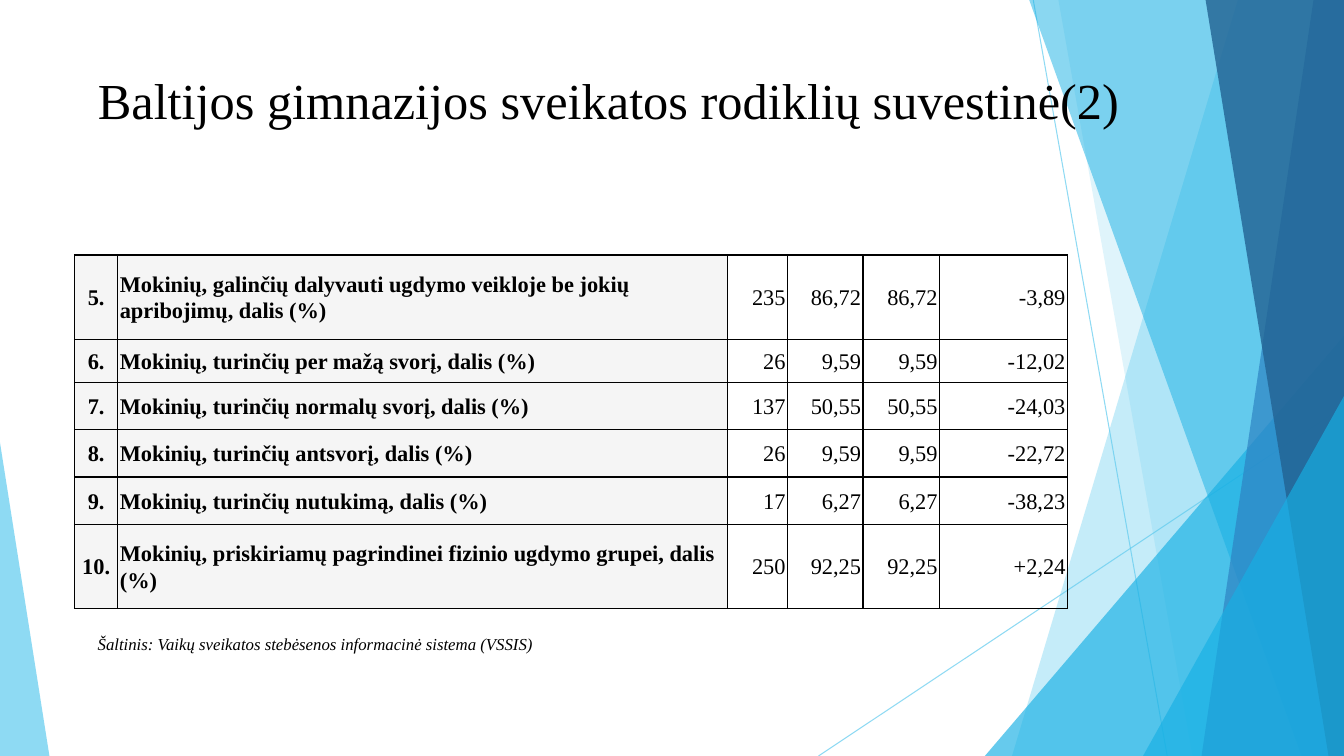
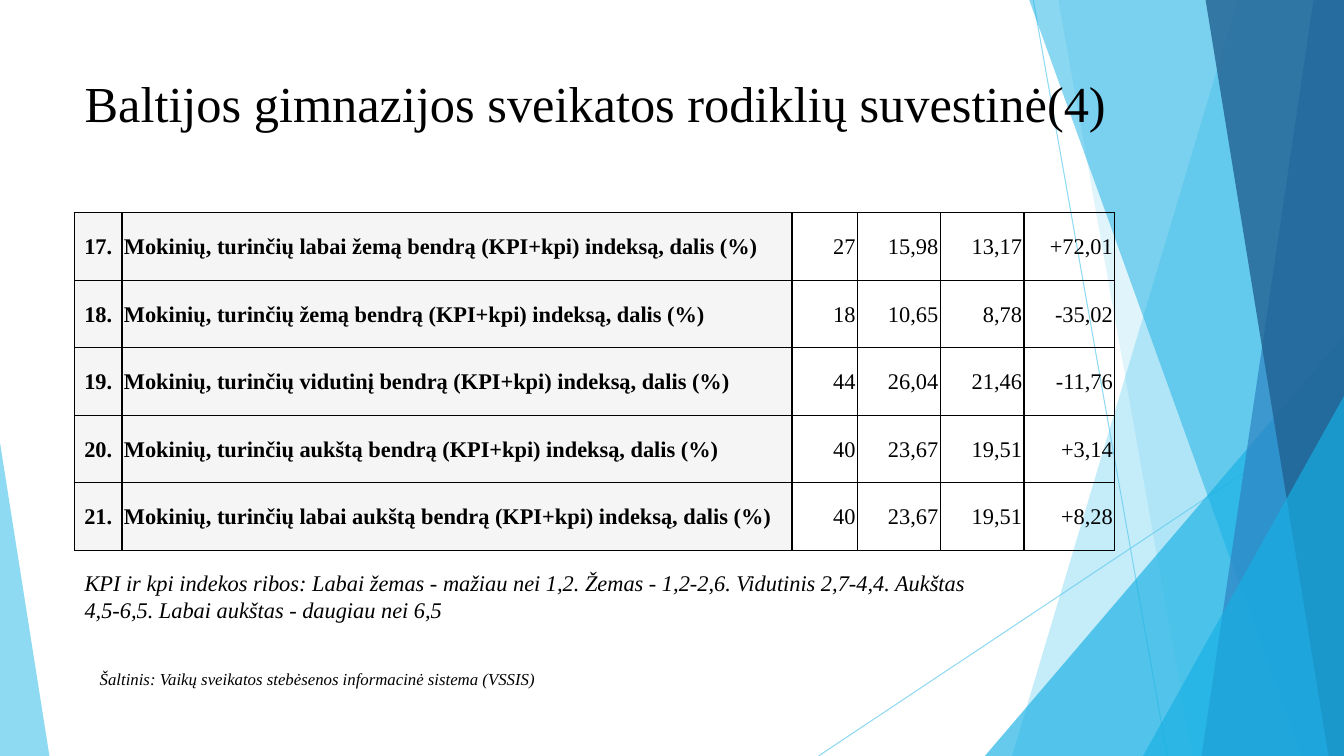
import pptx
import pptx.util
import pptx.dml.color
import pptx.enum.shapes
import pptx.enum.text
import pptx.oxml
import pptx.oxml.ns

Rgb = pptx.dml.color.RGBColor
Pt = pptx.util.Pt
Align = pptx.enum.text.PP_ALIGN
Anchor = pptx.enum.text.MSO_ANCHOR
Fit = pptx.enum.text.MSO_AUTO_SIZE

WIDE, HIGH = pptx.util.Inches(13.33), pptx.util.Inches(7.5)
BLACK = Rgb(0x00, 0x00, 0x00)
PALE = Rgb(0xF5, 0xF5, 0xF5)
SKY = Rgb(0x5F, 0xCB, 0xEF)
CYAN = Rgb(0x17, 0xB0, 0xE4)
BLUE = Rgb(0x2E, 0x83, 0xC3)
NAVY = Rgb(0x22, 0x62, 0x92)
FONT = "Times New Roman"
SOURCE = "Šaltinis: Vaikų sveikatos stebėsenos informacinė sistema (VSSIS)"
LIMITS = ("KPI ir kpi indekos ribos: Labai žemas - mažiau nei 1,2. "
          "Žemas - 1,2-2,6. Vidutinis 2,7-4,4. Aukštas 4,5-6,5. "
          "Labai aukštas - daugiau nei 6,5")

RAYS = [((76.88, 0), (86.85, 100)), ((100, 53.73), (60.9, 100))]
FACETS = [
    ("band", (92.1, 75.3), SKY, 36),
    ("band", (78.75, 88.73), SKY, 20),
    ("peak", (73.28, 44.4, 26.72, 55.6, 1), CYAN, 66),
    ("band", (76.58, 96.83), CYAN, 50),
    ("band", (97.73, 89.4), BLUE, 70),
    ("band", (89.7, 98.85), NAVY, 80),
    ("peak", (85.05, 52.4, 14.95, 47.6, 1), CYAN, 66),
    ("peak", (0, 58.53, 3.68, 41.47, 0), SKY, 70),
]

HEALTH = [
    ("5.", "Mokinių, galinčių dalyvauti ugdymo veikloje be jokių apribojimų, dalis (%)",
     "235", "86,72", "86,72", "-3,89"),
    ("6.", "Mokinių, turinčių per mažą svorį, dalis (%)", "26", "9,59", "9,59", "-12,02"),
    ("7.", "Mokinių, turinčių normalų svorį, dalis (%)", "137", "50,55", "50,55", "-24,03"),
    ("8.", "Mokinių, turinčių antsvorį, dalis (%)", "26", "9,59", "9,59", "-22,72"),
    ("9.", "Mokinių, turinčių nutukimą, dalis (%)", "17", "6,27", "6,27", "-38,23"),
    ("10.", "Mokinių, priskiriamų pagrindinei fizinio ugdymo grupei, dalis (%)",
     "250", "92,25", "92,25", "+2,24"),
]
TEETH = [
    (number, f"Mokinių, turinčių {level} bendrą (KPI+kpi) indeksą, dalis (%)", *values)
    for number, level, *values in [
        ("17.", "labai žemą", "27", "15,98", "13,17", "+72,01"),
        ("18.", "žemą", "18", "10,65", "8,78", "-35,02"),
        ("19.", "vidutinį", "44", "26,04", "21,46", "-11,76"),
        ("20.", "aukštą", "40", "23,67", "19,51", "+3,14"),
        ("21.", "labai aukštą", "40", "23,67", "19,51", "+8,28"),
    ]
]


def spot(x, y):
    return round(WIDE * x / 100), round(HIGH * y / 100)


def area(box):
    return spot(*box[:2]) + spot(*box[2:])


def fade(part, share):
    for color in part.iter(pptx.oxml.ns.qn("a:srgbClr")):
        alpha = color.makeelement(pptx.oxml.ns.qn("a:alpha"), {"val": str(share * 1000)})
        color.append(alpha)


def style(para, size, bold=False, italic=False):
    font = para.font
    font.name, font.size = FONT, Pt(size)
    font.bold, font.italic = bold, italic
    font.color.rgb = BLACK


def add_ray(shapes, start, end):
    ray = shapes.add_connector(pptx.enum.shapes.MSO_CONNECTOR.STRAIGHT,
                               *spot(*start), *spot(*end))
    ray.line.color.rgb = SKY
    ray.line.width = Pt(0.75)
    props = ray.element.spPr
    fade(props, 70)
    props.append(props.makeelement(pptx.oxml.ns.qn("a:effectLst"), {}))
    return ray


def add_facet(shapes, kind, form, color, share):
    if kind == "band":
        top, base = form
        pen = shapes.build_freeform(*spot(top, 0))
        pen.add_line_segments([spot(100, 0), spot(100, 100), spot(base, 100)], close=True)
        facet = pen.convert_to_shape()
    else:
        *box, tip = form
        facet = shapes.add_shape(pptx.enum.shapes.MSO_SHAPE.ISOSCELES_TRIANGLE, *area(box))
        facet.adjustments[0] = tip
    facet.shadow.inherit = False
    facet.fill.solid()
    facet.fill.fore_color.rgb = color
    facet.line.fill.background()
    fade(facet.element.spPr, share)
    return facet


def dress(layout, slide):
    for holder in list(layout.placeholders):
        if holder.placeholder_format.idx:
            holder.element.getparent().remove(holder.element)
    parts = [add_ray(slide.shapes, *ends) for ends in RAYS]
    parts += [add_facet(slide.shapes, *facet) for facet in FACETS]
    for place, part in enumerate(parts, 2):
        layout.shapes.element.insert(place, part.element)


def set_title(slide, box, text):
    title = slide.shapes.title
    title.left, title.top, title.width, title.height = area(box)
    frame = title.text_frame
    frame.text = text
    frame.vertical_anchor = Anchor.TOP
    frame.auto_size = Fit.NONE
    frame.paragraphs[0].alignment = Align.LEFT
    style(frame.paragraphs[0], 36)


def add_note(slide, box, text, size):
    frame = slide.shapes.add_textbox(*area(box)).text_frame
    frame.word_wrap = True
    frame.auto_size = Fit.SHAPE_TO_FIT_TEXT
    frame.text = text
    style(frame.paragraphs[0], size, italic=True)


def frame_cell(cell):
    props = cell._tc.get_or_add_tcPr()
    for side in "LRTB":
        props.append(pptx.oxml.parse_xml(
            f'<a:ln{side} {pptx.oxml.ns.nsdecls("a")} w="{Pt(1)}"><a:solidFill>'
            f'<a:srgbClr val="{BLACK}"/></a:solidFill></a:ln{side}>'))


def fill_cell(cell, col, text):
    label = col < 2
    cell.margin_left = cell.margin_right = pptx.util.Inches(0.02)
    cell.margin_top = cell.margin_bottom = pptx.util.Inches(0.02)
    cell.vertical_anchor = Anchor.MIDDLE
    frame_cell(cell)
    if label:
        cell.fill.solid()
        cell.fill.fore_color.rgb = PALE
    else:
        cell.fill.background()
    cell.text = text
    para = cell.text_frame.paragraphs[0]
    para.alignment = (Align.CENTER, Align.LEFT)[col] if label else Align.RIGHT
    para.line_spacing = 1.07
    style(para, 16, bold=label)


def add_grid(slide, box, rows, widths, heights):
    left, top, wide, high = area(box)
    table = slide.shapes.add_table(len(rows), len(widths), left, top, wide, high).table
    table.first_row = table.horz_banding = False
    for column, share in zip(table.columns, widths):
        column.width = round(wide * share / sum(widths))
    for row, share in zip(table.rows, heights):
        row.height = round(high * share / sum(heights))
    for line, texts in enumerate(rows):
        for col, text in enumerate(texts):
            fill_cell(table.cell(line, col), col, text)


def main():
    deck = pptx.Presentation()
    deck.slide_width, deck.slide_height = WIDE, HIGH
    layout = deck.slide_layouts.get_by_name("Title Only")
    health = deck.slides.add_slide(layout)
    dress(layout, health)
    teeth = deck.slides.add_slide(layout)
    title = "Baltijos gimnazijos sveikatos rodiklių suvestinė"

    set_title(health, (6.53, 8.53, 86.25, 19.2), title + "(2)")
    add_grid(health, (5.55, 33.73, 73.88, 46.8), HEALTH,
             (0.43, 6.05, 0.6, 0.75, 0.76, 1.27), (0.84, 0.43, 0.47, 0.47, 0.47, 0.84))
    add_note(health, (6.53, 83.2, 34.35, 4), SOURCE, 12)

    set_title(teeth, (5.55, 8.93, 85.35, 19.2), title + "(4)")
    add_grid(teeth, (5.55, 28.13, 77.4, 44.67), TEETH,
             (0.47, 6.64, 0.65, 0.82, 0.83, 0.9), [1] * len(TEETH))
    add_note(teeth, (6.68, 87.87, 36.3, 4), SOURCE, 12)
    add_note(teeth, (5.55, 74.67, 69.45, 8.53), LIMITS, 16)
    deck.save("out.pptx")


if __name__ == "__main__":
    main()
